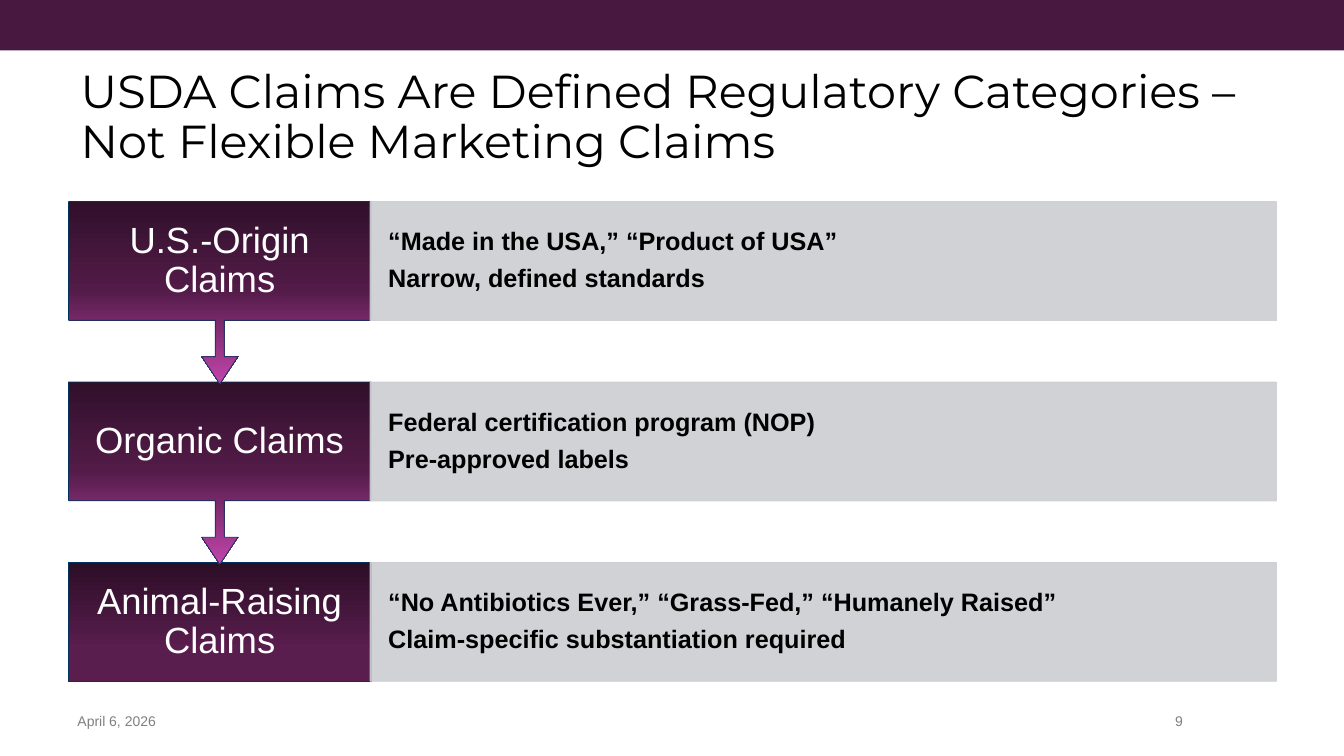
from lxml.etree import SubElement
from pptx import Presentation
from pptx.dml.color import RGBColor
from pptx.enum.shapes import MSO_SHAPE
from pptx.enum.text import MSO_ANCHOR, PP_ALIGN
from pptx.oxml.ns import qn
from pptx.util import Inches, Pt

TITLE = "USDA Claims Are Defined Regulatory Categories – Not Flexible Marketing Claims"
CLAIMS = [
    ("U.S.-Origin Claims",
     ["“Made in the USA,” “Product of USA”", "Narrow, defined standards"]),
    ("Organic Claims",
     ["Federal certification program (NOP)", "Pre‑approved labels"]),
    ("Animal‑Raising Claims",
     ["“No Antibiotics Ever,” “Grass‑Fed,” “Humanely Raised”",
      "Claim‑specific substantiation required"]),
]
FOOTERS = [
    ("April 6, 2026", (0.67, 6.95, 2.31, 0.4), PP_ALIGN.LEFT),
    ("9", (10.48, 6.95, 1.35, 0.4), PP_ALIGN.RIGHT),
]

CALLOUT_STOPS = [(0, "31102B"), (48, "521B48"), (100, "C245AB")]
LAST_STOPS = [(28, "591D4E"), (100, "2C0E26")]
CALLOUT_ADJUSTMENTS = [0.05, 0.1, 0.15, 0.65]

TITLE_FONT = {"name": "Montserrat", "size": Pt(33), "bold": False}
LABEL_FONT = {"name": "Arial", "size": Pt(26), "bold": False}
DETAIL_FONT = {"name": "Arial", "size": Pt(18), "bold": True}
FOOTER_FONT = {"name": "Arial", "size": Pt(10), "bold": False}

LABEL_LEFT, LABEL_WIDTH = 0.68, 3
PANEL_LEFT, PANEL_WIDTH = 3.67, 8.99
FIRST_TOP, ROW_STEP, ROW_HEIGHT, CALLOUT_HEIGHT = 2, 1.79, 1.18, 1.81


def color(hex_string):
    return RGBColor.from_string(hex_string)


def box(left, top, width, height):
    return [Inches(value) for value in (left, top, width, height)]


def write(shape, lines, font, font_color, align=PP_ALIGN.LEFT, spacing=0.9, after=0, insets=(0.1, 0.05)):
    frame = shape.text_frame
    side, edge = (Inches(inset) for inset in insets)
    frame_format = {"word_wrap": True, "vertical_anchor": MSO_ANCHOR.MIDDLE,
                    "margin_left": side, "margin_right": side,
                    "margin_top": edge, "margin_bottom": edge}
    for name, value in frame_format.items():
        setattr(frame, name, value)
    for index, line in enumerate(lines):
        paragraph = frame.paragraphs[0] if index == 0 else frame.add_paragraph()
        paragraph.alignment = align
        paragraph.line_spacing = spacing
        paragraph.space_before = Pt(0)
        paragraph.space_after = Pt(after)
        run = paragraph.add_run()
        run.text = line
        for name, value in font.items():
            setattr(run.font, name, value)
        run.font.color.rgb = color(font_color)


def add_block(slide, kind, position, fill, line=None):
    shape = slide.shapes.add_shape(kind, *box(*position))
    shape.shadow.inherit = False
    shape.fill.solid()
    shape.fill.fore_color.rgb = color(fill)
    if line:
        shape.line.color.rgb = color(line)
        shape.line.width = Pt(0.5)
    else:
        shape.line.fill.background()
    return shape


def set_gradient(shape, stops):
    shape.fill.gradient()
    shape.fill.gradient_angle = 90
    gradient = shape._element.spPr.find(qn("a:gradFill"))
    gradient.set("rotWithShape", "1")
    stop_list = gradient.find(qn("a:gsLst"))
    for stop in list(stop_list):
        stop_list.remove(stop)
    for position, hex_string in stops:
        stop = SubElement(stop_list, qn("a:gs"), pos=str(position * 1000))
        SubElement(stop, qn("a:srgbClr"), val=hex_string)


def set_opacity(shape, percent):
    for fill_color in shape._element.spPr.iter(qn("a:srgbClr")):
        SubElement(fill_color, qn("a:alpha"), val=str(percent * 1000))


def add_claim(slide, top, label, details, is_last):
    kind = MSO_SHAPE.RECTANGLE if is_last else MSO_SHAPE.UP_ARROW_CALLOUT
    height = ROW_HEIGHT if is_last else CALLOUT_HEIGHT
    block = add_block(slide, kind, (LABEL_LEFT, top, LABEL_WIDTH, height), "591D4E", "00335D")
    set_gradient(block, LAST_STOPS if is_last else CALLOUT_STOPS)
    if not is_last:
        block.rotation = 180
        for index, value in enumerate(CALLOUT_ADJUSTMENTS):
            block.adjustments[index] = value
    label_box = slide.shapes.add_textbox(*box(LABEL_LEFT, top, LABEL_WIDTH, ROW_HEIGHT))
    write(label_box, [label], LABEL_FONT, "FFFFFF", PP_ALIGN.CENTER, insets=(0.21, 0.2))

    panel = add_block(slide, MSO_SHAPE.RECTANGLE,
                      (PANEL_LEFT, top, PANEL_WIDTH, ROW_HEIGHT), "CCCED2", "CCCED2")
    set_opacity(panel, 90)
    write(panel, details, DETAIL_FONT, "000000", after=7, insets=(0.18, 0.25))


def main():
    presentation = Presentation()
    presentation.slide_width = Inches(13.33)
    presentation.slide_height = Inches(7.5)
    slide = presentation.slides.add_slide(presentation.slide_layouts[5])

    add_block(slide, MSO_SHAPE.RECTANGLE, (0, 0, 13.33, 0.5), "491840")
    title = slide.shapes.title
    title.left, title.top, title.width, title.height = box(0.7, 0.5, 11.96, 1.35)
    write(title, [TITLE], TITLE_FONT, "000000")

    for text, position, align in FOOTERS:
        footer = slide.shapes.add_textbox(*box(*position))
        write(footer, [text], FOOTER_FONT, "808080", align, spacing=1)

    for index, (label, details) in reversed(list(enumerate(CLAIMS))):
        top = FIRST_TOP + index * ROW_STEP
        add_claim(slide, top, label, details, index == len(CLAIMS) - 1)

    presentation.save("out.pptx")


if __name__ == "__main__":
    main()
